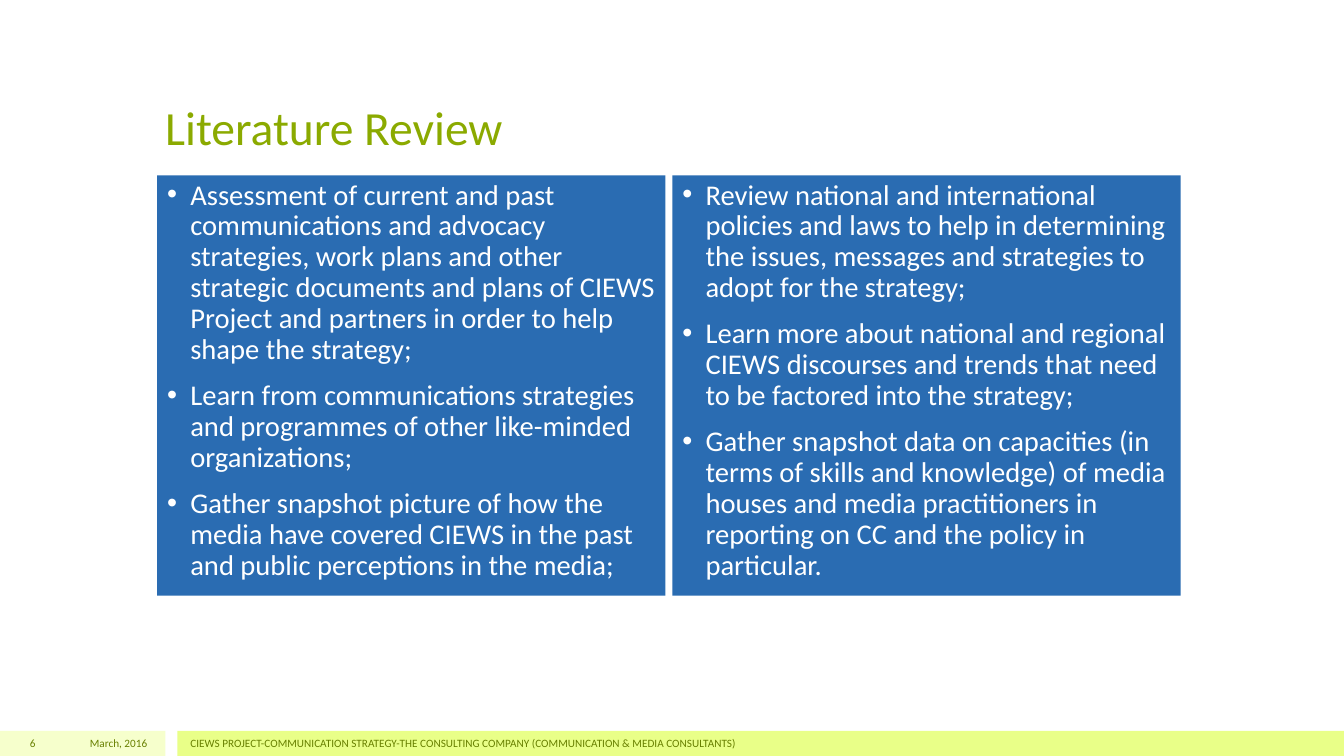
from lxml import etree
from pptx import Presentation
from pptx.dml.color import RGBColor
from pptx.enum.shapes import MSO_SHAPE
from pptx.enum.text import MSO_ANCHOR, PP_ALIGN
from pptx.oxml.ns import qn
from pptx.util import Inches, Pt

RECTANGLE = MSO_SHAPE.RECTANGLE
TOP, MIDDLE, BOTTOM = MSO_ANCHOR.TOP, MSO_ANCHOR.MIDDLE, MSO_ANCHOR.BOTTOM
LEFT, RIGHT = PP_ALIGN.LEFT, PP_ALIGN.RIGHT

FONT = "Calibri"
GREEN, DARK_GREEN, BLUE, WHITE = "8BAA00", "688000", "2A6CB2", "FFFFFF"
PALE_LIME, LIME = "F6FFCC", "E9FF88"
FOOTER_TOP, FOOTER_HEIGHT = 7.25, 0.25
PANEL_LEFT, PANEL_TOP, PANEL_WIDTH, PANEL_HEIGHT = 1.56, 1.74, 5.04, 4.17
PANEL_STEP = 5.11
BULLET_INDENT = 0.23
BULLET_FORMAT = {"alignment": LEFT, "line_spacing": 0.9, "space_before": Pt(11)}

REVIEW_PANELS = [
    [
        "Assessment of current and past communications and advocacy strategies, "
        "work plans and other strategic documents and plans of CIEWS Project and "
        "partners in order to help shape the strategy;",
        "Learn from communications strategies and programmes of other "
        "like-minded organizations;",
        "Gather snapshot picture of how the media have covered CIEWS in the past "
        "and public perceptions in the media;",
    ],
    [
        "Review national and international policies and laws to help in "
        "determining the issues, messages and strategies to adopt for the strategy;",
        "Learn more about national and regional CIEWS discourses and trends that "
        "need to be factored into the strategy;",
        "Gather snapshot data on capacities (in terms of skills and knowledge) of "
        "media houses and media practitioners in reporting on CC and the policy "
        "in particular.",
    ],
]
FOOTER_BANDS = [(0, 1.64, PALE_LIME), (1.76, 11.57, LIME)]
FOOTER_TEXTS = [
    (0.47, 1.09, "March, 2016", RIGHT),
    (1.79, 10, "CIEWS PROJECT-COMMUNICATION STRATEGY-THE CONSULTING COMPANY "
     "(COMMUNICATION & MEDIA CONSULTANTS)", LEFT),
    (0, 0.45, "6", RIGHT),
]


def rgb(hex_color):
    """Turn a hex string into a colour."""
    return RGBColor.from_string(hex_color)


def apply_format(target, values):
    """Set every attribute named in a dict of format values."""
    for name, value in values.items():
        setattr(target, name, value)


def add_bullet(paragraph):
    """Give a paragraph a hanging bullet."""
    properties = paragraph._p.get_or_add_pPr()
    properties.set("marL", str(Inches(BULLET_INDENT)))
    properties.set("indent", str(-Inches(BULLET_INDENT)))
    etree.SubElement(properties, qn("a:buFont")).set("typeface", "Arial")
    etree.SubElement(properties, qn("a:buChar")).set("char", "•")


def write_paragraph(paragraph, wording, size, color, layout):
    """Write one styled run into a paragraph."""
    apply_format(paragraph, layout)
    run = paragraph.add_run()
    run.text = wording
    apply_format(run.font, {"name": FONT, "size": Pt(size)})
    run.font.color.rgb = rgb(color)


def add_rectangle(slide, left, top, width, height, color):
    """Draw a plain filled rectangle."""
    rectangle = slide.shapes.add_shape(
        RECTANGLE, Inches(left), Inches(top), Inches(width), Inches(height))
    rectangle.shadow.inherit = False
    rectangle.fill.solid()
    rectangle.fill.fore_color.rgb = rgb(color)
    rectangle.line.fill.background()
    return rectangle


def add_label(slide, box, wording, size, color, anchor, alignment=LEFT):
    """Place one line of text in a box."""
    label = slide.shapes.add_textbox(*map(Inches, box)).text_frame
    apply_format(label, {"word_wrap": True, "vertical_anchor": anchor})
    write_paragraph(label.paragraphs[0], wording, size, color,
                    {"alignment": alignment})


def add_review_panel(slide, left, points):
    """Draw a blue panel with bulleted review points."""
    panel = add_rectangle(
        slide, left, PANEL_TOP, PANEL_WIDTH, PANEL_HEIGHT, BLUE).text_frame
    apply_format(panel, {"word_wrap": True, "vertical_anchor": TOP})
    for index, point in enumerate(points):
        paragraph = panel.add_paragraph() if index else panel.paragraphs[0]
        write_paragraph(paragraph, point, 20.4, WHITE, BULLET_FORMAT)
        add_bullet(paragraph)


def add_footer(slide):
    """Draw the footer bands with page number, date and project name."""
    for left, width, color in FOOTER_BANDS:
        add_rectangle(slide, left, FOOTER_TOP, width, FOOTER_HEIGHT, color)
    for left, width, wording, alignment in FOOTER_TEXTS:
        add_label(slide, (left, FOOTER_TOP, width, FOOTER_HEIGHT), wording, 8,
                  DARK_GREEN, MIDDLE, alignment)


def main():
    """Build the literature review slide and save it."""
    deck = Presentation()
    apply_format(deck, {"slide_width": Inches(13.33), "slide_height": Inches(7.5)})
    slide = deck.slides.add_slide(deck.slide_layouts[6])
    add_footer(slide)
    add_label(slide, (1.54, 0.3, 10.25, 1.29), "Literature Review", 34, GREEN, BOTTOM)
    for column, points in enumerate(REVIEW_PANELS):
        add_review_panel(slide, PANEL_LEFT + column * PANEL_STEP, points)
    deck.save("out.pptx")


if __name__ == "__main__":
    main()
